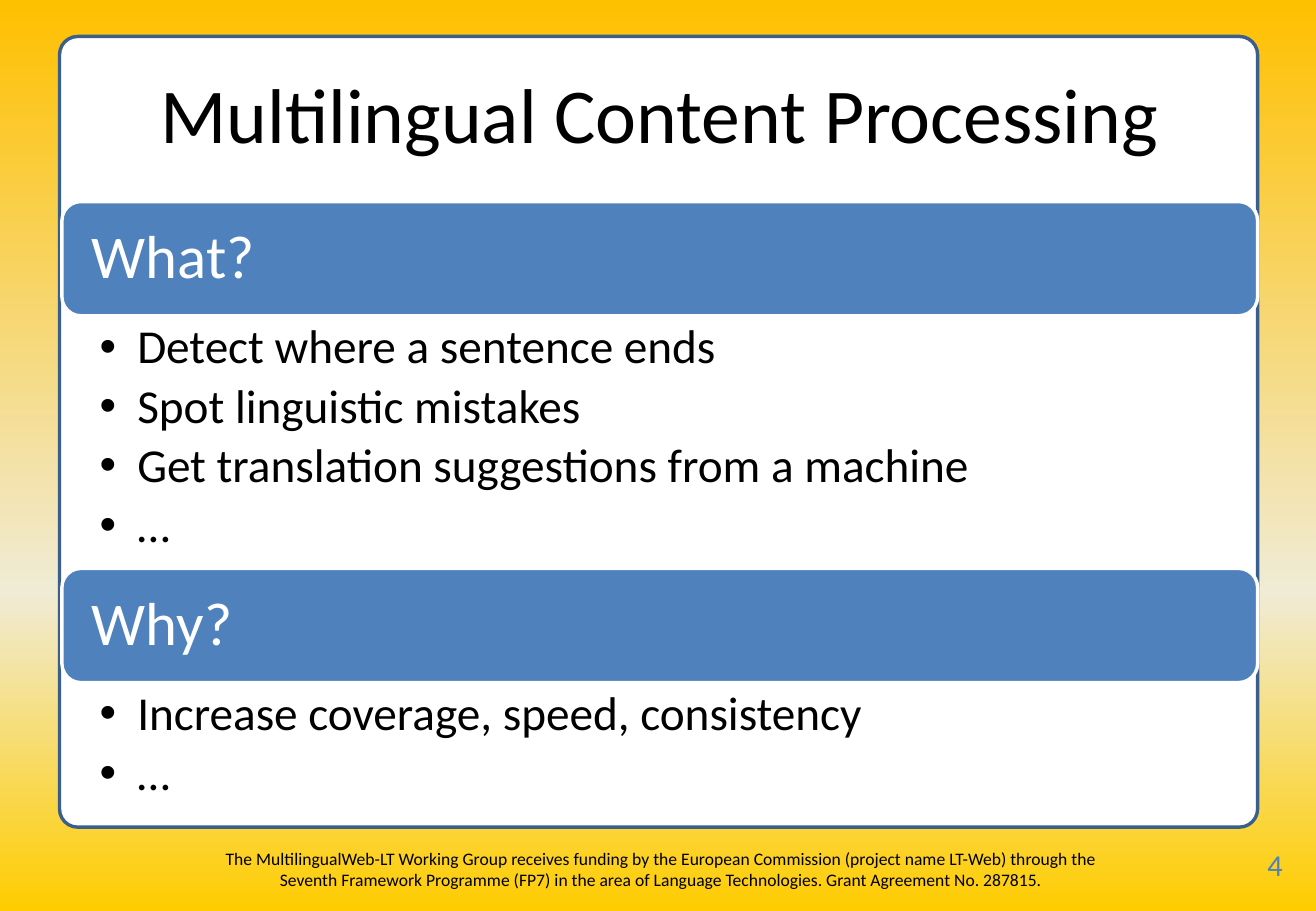
from copy import deepcopy

from pptx import Presentation
from pptx.dml.color import RGBColor
from pptx.enum.shapes import MSO_SHAPE
from pptx.enum.text import MSO_ANCHOR, MSO_AUTO_SIZE, PP_ALIGN
from pptx.util import Inches, Pt


def color(hex_string):
    return RGBColor.from_string(hex_string)


def write(shape, box, lines, size, hex_string, align=PP_ALIGN.LEFT,
          anchor=MSO_ANCHOR.TOP, insets=(0.1, 0.05, 0.1, 0.05)):
    """Place a shape, then fill it with formatted paragraphs."""
    shape.left, shape.top, shape.width, shape.height = map(Inches, box)
    frame = shape.text_frame
    frame.text = "\n".join(lines)
    frame.word_wrap = True
    frame.auto_size = MSO_AUTO_SIZE.NONE
    frame.vertical_anchor = anchor
    (frame.margin_left, frame.margin_top,
     frame.margin_right, frame.margin_bottom) = map(Inches, insets)
    for paragraph in frame.paragraphs:
        paragraph.alignment = align
        paragraph.space_before = Pt(0)
        for run in paragraph.runs:
            run.font.name = "Calibri"
            run.font.size = Pt(size)
            run.font.color.rgb = color(hex_string)


presentation = Presentation()
presentation.slide_width, presentation.slide_height = Inches(10.83), Inches(7.5)
slide = presentation.slides.add_slide(presentation.slide_layouts[3])
title, *lists = slide.placeholders
LEFT, WIDTH, BAR_HEIGHT = 0.51, 9.84, 0.94

# Background gradient with three stops
background = slide.background.fill
background.gradient()
background.gradient_angle = 270
stop_list = slide.element.xpath(".//a:gsLst")[0]
stop_list.append(deepcopy(stop_list[-1]))
gradient = [(0, "FFC000"), (0.65, "F0EBD5"), (1, "FFCC00")]
for stop, (position, shade) in zip(background.gradient_stops, gradient):
    stop.position = position
    stop.color.rgb = color(shade)

# White panel behind everything, then one bar per section
sections = [
    ("What?", 1.66, 2.08, ["Detect where a sentence ends", "Spot linguistic mistakes",
                           "Get translation suggestions from a machine", "…"]),
    ("Why?", 4.68, 1.06, ["Increase coverage, speed, consistency", "…"]),
]
panel_style = (0.49, 0.3, 9.86, 6.51, 0.023, "FFFFFF", "3A5F8C")
bar_styles = [(LEFT, top, WIDTH, BAR_HEIGHT, 0.1667, "4F81BD", "FFFFFF")
              for _, top, _, _ in sections]
rectangles = []
for left, top, width, height, corner, fill, line in [panel_style, *bar_styles]:
    shape = slide.shapes.add_shape(
        MSO_SHAPE.ROUNDED_RECTANGLE, *map(Inches, (left, top, width, height)))
    shape.adjustments[0] = corner
    shape.shadow.inherit = False
    shape.fill.solid()
    shape.fill.fore_color.rgb = color(fill)
    shape.line.color.rgb = color(line)
    shape.line.width = Pt(2)
    rectangles.append(shape)
panel, *bars = rectangles
title.element.addprevious(panel.element)

# Title
write(title, (LEFT, 0.3, 9.83, 1.25), ["Multilingual Content Processing"], 46,
      "000000", PP_ALIGN.CENTER, MSO_ANCHOR.MIDDLE)

# Section headings and their bullet lists
for (heading, top, height, items), bar, body in zip(sections, bars, lists):
    write(bar, (LEFT, top, WIDTH, BAR_HEIGHT), [heading], 36, "FFFFFF",
          anchor=MSO_ANCHOR.MIDDLE, insets=(0.2, 0.15, 0.2, 0.15))
    bar.text_frame.paragraphs[0].line_spacing = 0.9
    write(body, (LEFT, top + BAR_HEIGHT + 0.01, WIDTH, height), items, 28, "000000",
          insets=(0.31, 0.05, 0.28, 0.05))
    for paragraph in body.text_frame.paragraphs:
        paragraph.line_spacing = 0.9
        paragraph.space_after = Pt(5)
        properties = paragraph._p.get_or_add_pPr()
        properties.set("marL", str(Inches(0.31)))
        properties.set("indent", str(-Inches(0.31)))

# Funding note and page number
funding = ("The MultilingualWeb-LT Working Group receives funding by the European "
           "Commission (project name LT-Web) through the Seventh Framework Programme "
           "(FP7) in the area of Language Technologies. Grant Agreement No. 287815.")
note, number = [slide.shapes.add_textbox(0, 0, 0, 0) for _ in range(2)]
write(note, (1.62, 6.93, 7.64, 0.4), [funding], 10.4, "000000", PP_ALIGN.CENTER)
write(number, (10.41, 6.96, 0.42, 0.4), ["4"], 18, "4F81BD",
      insets=(0.02, 0.01, 0.02, 0.01))

presentation.save("out.pptx")
